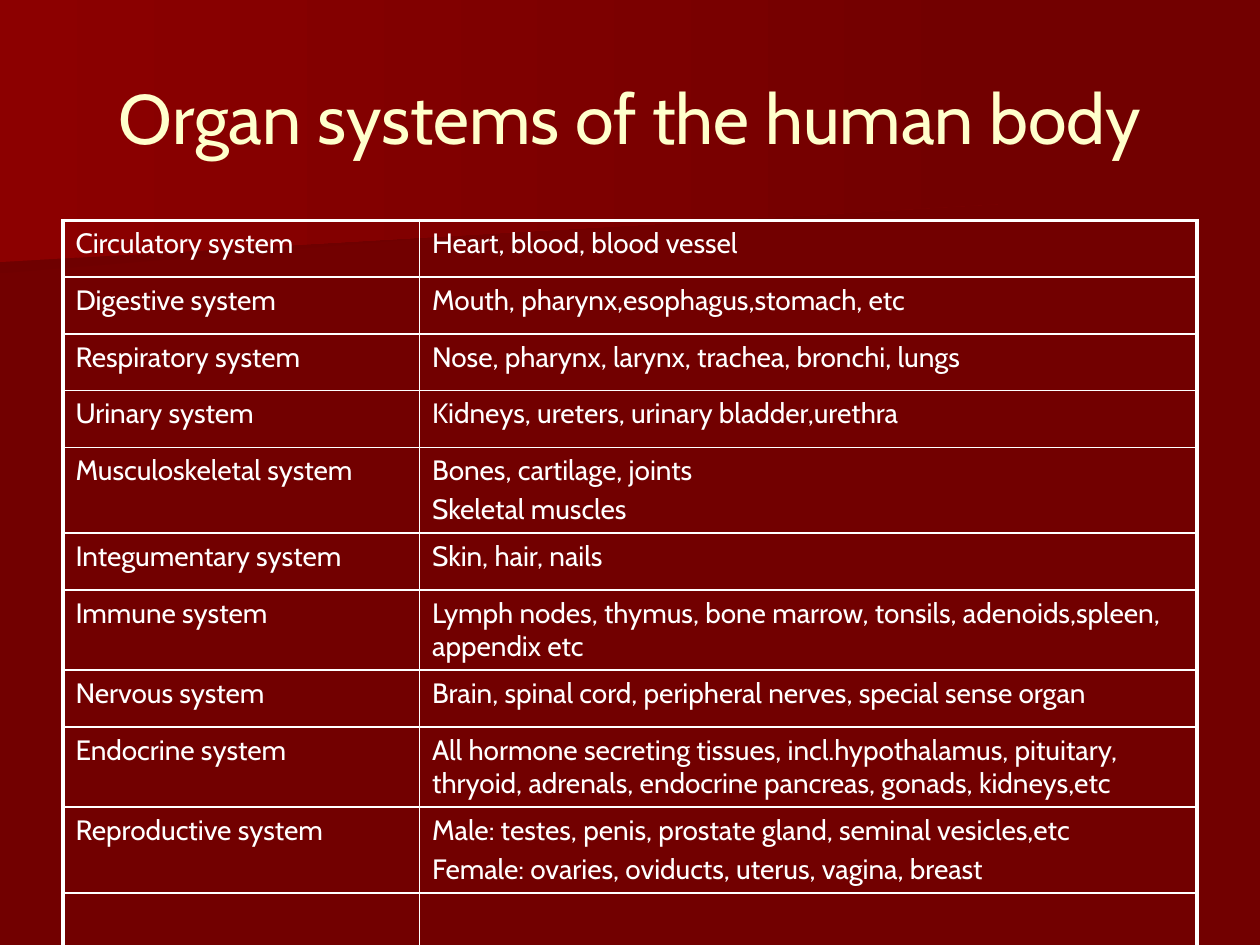
"""Build a slide with a table of the organ systems of the human body."""
from lxml import etree
from pptx import Presentation
from pptx import util as u
from pptx.dml.color import RGBColor
from pptx.enum import text
from pptx.oxml import ns

DARK_RED = RGBColor(0x72, 0x00, 0x00)
SHADE_RED = RGBColor(0x6F, 0x00, 0x00)
BRIGHT_RED = RGBColor(0x8C, 0x00, 0x00)
CREAM = RGBColor(0xFF, 0xFF, 0xCC)
WHITE = RGBColor(0xFF, 0xFF, 0xFF)

TITLE = "Organ systems of the human body"
SYSTEMS = [
    ("Circulatory system", "Heart, blood, blood vessel"),
    ("Digestive system", "Mouth, pharynx,esophagus,stomach, etc"),
    ("Respiratory system", "Nose, pharynx, larynx, trachea, bronchi, lungs"),
    ("Urinary system", "Kidneys, ureters, urinary bladder,urethra"),
    ("Musculoskeletal system", "Bones, cartilage, joints\nSkeletal muscles"),
    ("Integumentary system", "Skin, hair, nails"),
    ("Immune system", "Lymph nodes, thymus, bone marrow, tonsils, adenoids,spleen, appendix etc"),
    ("Nervous system", "Brain, spinal cord, peripheral nerves, special sense organ"),
    ("Endocrine system", "All hormone secreting tissues, incl.hypothalamus, pituitary, "
                         "thryoid, adrenals, endocrine pancreas, gonads, kidneys,etc"),
    ("Reproductive system", "Male: testes, penis, prostate gland, seminal vesicles,etc\n"
                            "Female: ovaries, oviducts, uterus, vagina, breast"),
    ("", ""),
]
BANDS = [
    (SHADE_RED, [(7.78, 1.53), (0, 2.17), (0, 1.01), (7.79, 1.01), (7.78, 1.28)]),
    (BRIGHT_RED, [(7.92, 1.62), (0, 2.08), (0, 0), (7.92, 0)]),
]
COLUMN_WIDTHS = (2.83, 6.17)
ROW_HEIGHT = 0.45
OUTER_LINE, INNER_LINE = 2.25, 1
TITLE_FONT = {"name": "Cabin", "size": u.Pt(40), "bold": False}
TABLE_FONT = {"name": "Cabin", "size": u.Pt(16), "bold": False}


def set_font(font, values, color):
    for name, value in values.items():
        setattr(font, name, value)
    font.color.rgb = color


def add_band(slide, color, points):
    corners = [(u.Inches(x), u.Inches(y)) for x, y in points]
    builder = slide.shapes.build_freeform(*corners[0])
    builder.add_line_segments(corners[1:], close=True)
    band = builder.convert_to_shape()
    band.shadow.inherit = False
    band.line.fill.background()
    band.fill.gradient()
    band.fill.gradient_angle = 0
    for stop, stop_color in zip(band.fill.gradient_stops, (color, DARK_RED)):
        stop.color.rgb = stop_color


def set_borders(cell, outer_sides):
    properties = cell._tc.get_or_add_tcPr()
    for side in "LRTB":
        width = OUTER_LINE if side in outer_sides else INNER_LINE
        line = etree.SubElement(properties, ns.qn(f"a:ln{side}"), w=str(u.Pt(width)))
        fill = etree.SubElement(line, ns.qn("a:solidFill"))
        etree.SubElement(fill, ns.qn("a:srgbClr"), val=str(WHITE))


def add_title(slide):
    title = slide.shapes.title
    title.left, title.top, title.width, title.height = map(u.Inches, (0.5, 0.3, 9, 1.25))
    title.text_frame.text = TITLE
    title.text_frame.vertical_anchor = text.MSO_ANCHOR.MIDDLE
    paragraph = title.text_frame.paragraphs[0]
    paragraph.alignment = text.PP_ALIGN.CENTER
    set_font(paragraph.runs[0].font, TITLE_FONT, CREAM)
    title.element.getparent().append(title.element)


def add_systems_table(slide):
    last = len(SYSTEMS) - 1
    frame = slide.shapes.add_table(
        len(SYSTEMS), len(COLUMN_WIDTHS), u.Inches(0.5), u.Inches(1.75),
        u.Inches(sum(COLUMN_WIDTHS)), u.Inches(ROW_HEIGHT * len(SYSTEMS)))
    table = frame.table
    table.first_row = table.horz_banding = False
    for column, width in zip(table.columns, COLUMN_WIDTHS):
        column.width = u.Inches(width)
    for row, entries in enumerate(SYSTEMS):
        table.rows[row].height = u.Inches(ROW_HEIGHT)
        for column, entry in enumerate(entries):
            cell = table.cell(row, column)
            outer_sides = "LR"[column] + {0: "T", last: "B"}.get(row, "")
            set_borders(cell, outer_sides)
            cell.fill.background()
            cell.text = entry
            for paragraph in cell.text_frame.paragraphs:
                paragraph.space_before = u.Pt(3.2)
                set_font(paragraph.font, TABLE_FONT, WHITE)
                for run in paragraph.runs:
                    set_font(run.font, TABLE_FONT, WHITE)


def main():
    presentation = Presentation()
    presentation.slide_width, presentation.slide_height = u.Inches(10), u.Inches(7.5)
    slide = presentation.slides.add_slide(presentation.slide_layouts[5])
    slide.background.fill.solid()
    slide.background.fill.fore_color.rgb = DARK_RED
    for color, points in BANDS:
        add_band(slide, color, points)
    add_title(slide)
    add_systems_table(slide)
    presentation.save("out.pptx")


if __name__ == "__main__":
    main()
